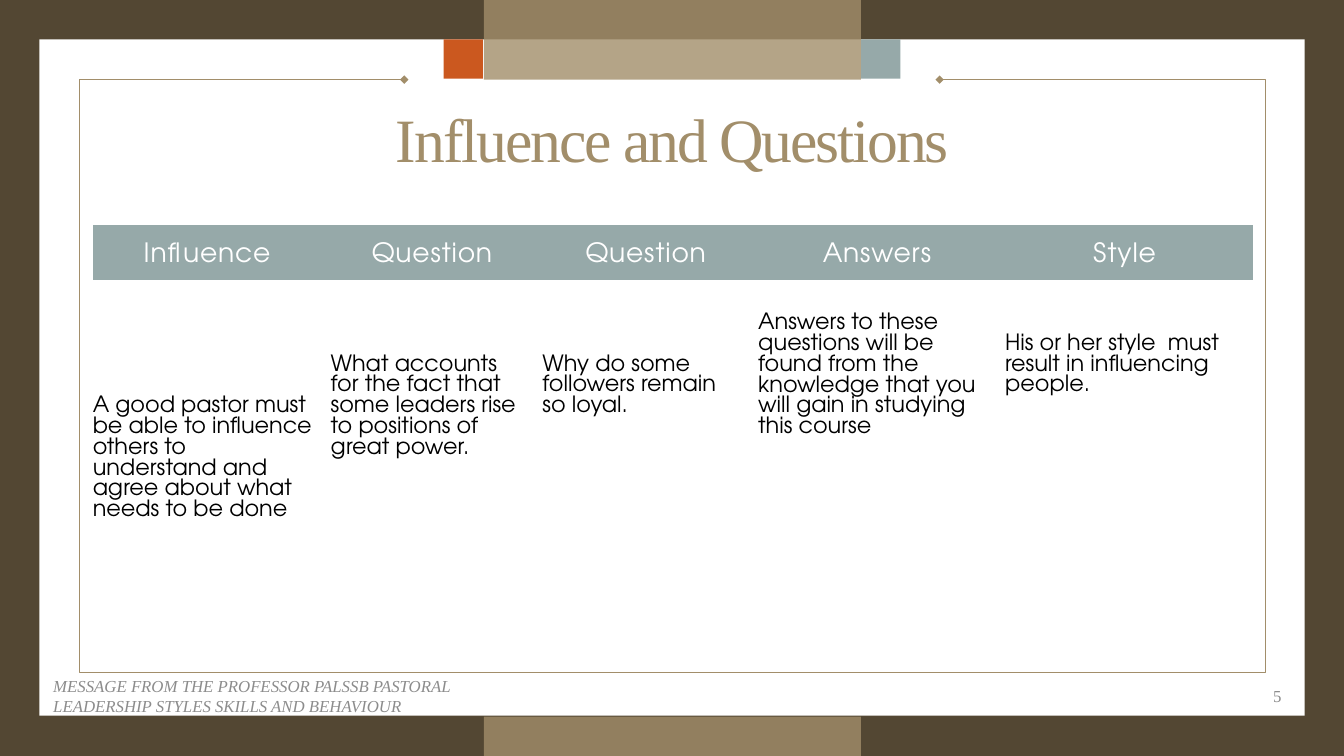
"""Build the Influence and Questions slide."""
from dataclasses import dataclass

from pptx import Presentation
from pptx.dml.color import RGBColor
from pptx.enum import shapes, text
from pptx.oxml import ns, xmlchemy
from pptx.util import Inches, Pt

TITLE = "Influence and Questions"
FOOTER = "MESSAGE FROM THE PROFESSOR PALSSB PASTORAL LEADERSHIP STYLES SKILLS AND BEHAVIOUR"
PAGE = "5"
COLUMNS = [
    ("Influence ", 2.36, 5, "A good pastor must be able to influence others to understand and "
                            "agree about what needs to be done"),
    ("Question ", 2.1, 3, "What accounts for the fact that some leaders rise to positions of "
                          "great power."),
    ("Question ", 2.14, 3, "Why do some followers remain so loyal."),
    ("Answers ", 2.45, 1, "Answers to these questions will be found from the knowledge that "
                          "you will gain in studying this course"),
    ("Style ", 2.46, 2, "His or her style  must result in influencing people."),
]
ROW_HEIGHTS = (0.55, 3.51)
LINE_STEP = 0.206
NO_STYLE = "{2D5ABB26-0587-4C30-8999-92F81FD0307C}"


@dataclass(frozen=True)
class Theme:
    """Colours, fonts and type sizes."""
    dark: str = "534733"
    white: str = "FFFFFF"
    black: str = "000000"
    tan: str = "A28E6A"
    orange: str = "CB581F"
    sage: str = "96A9A9"
    grey: str = "8C8C8C"
    serif: str = "Times New Roman"
    sans: str = "TeX Gyre Adventor"
    title: float = 44
    header: float = 19
    body: float = 16
    footer: float = 12


THEME = Theme()
BLOCKS = [
    (4.8, 0, 3.74, 0.79, THEME.tan, 80),
    (4.4, 0.39, 0.39, 0.39, THEME.orange, 100),
    (8.54, 0.39, 0.39, 0.39, THEME.sage, 100),
    (4.8, 7.11, 3.74, 0.39, THEME.tan, 80),
]
FRAME = [(9.32, 0.79), (12.55, 0.79), (12.55, 6.67), (0.79, 6.67), (0.79, 0.79), (4.01, 0.79)]


def write(frame, words, *, size, color, font=THEME.serif, align=text.PP_ALIGN.LEFT,
          anchor=text.MSO_ANCHOR.MIDDLE, spacing=0, italic=False, line_spacing=None):
    """Put one formatted paragraph into a text frame."""
    frame.word_wrap = True
    frame.vertical_anchor = anchor
    paragraph = frame.paragraphs[0]
    paragraph.alignment = align
    if line_spacing:
        paragraph.line_spacing = line_spacing
    run = paragraph.add_run()
    run.text = words
    run.font.name, run.font.size, run.font.italic = font, Pt(size), italic
    run.font.color.rgb = RGBColor.from_string(color)
    run._r.get_or_add_rPr().set("spc", str(round(spacing * 100)))


def add_block(slide, left, top, width, height, color, opacity=100):
    """Add a borderless rectangle."""
    block = slide.shapes.add_shape(shapes.MSO_SHAPE.RECTANGLE, *map(Inches, (left, top, width, height)))
    block.shadow.inherit = False
    block.line.fill.background()
    block.fill.solid()
    block.fill.fore_color.rgb = RGBColor.from_string(color)
    if opacity < 100:
        tint = block.element.spPr.find(".//" + ns.qn("a:srgbClr"))
        alpha = xmlchemy.OxmlElement("a:alpha")
        alpha.set("val", str(opacity * 1000))
        tint.append(alpha)


def add_frame(slide):
    """Draw the open border with diamond ends."""
    points = [(Inches(x), Inches(y)) for x, y in FRAME]
    builder = slide.shapes.build_freeform(*points[0])
    builder.add_line_segments(points[1:], close=False)
    border = builder.convert_to_shape()
    border.shadow.inherit = False
    border.fill.background()
    border.line.color.rgb = RGBColor.from_string(THEME.tan)
    border.line.width = Pt(1)
    for end in ("a:headEnd", "a:tailEnd"):
        diamond = xmlchemy.OxmlElement(end)
        diamond.set("type", "diamond")
        border.element.spPr.find(ns.qn("a:ln")).append(diamond)


def set_margins(cell, top, right):
    """Set the inner margins of a cell."""
    cell.margin_left, cell.margin_top = 0, Inches(top)
    cell.margin_right, cell.margin_bottom = Inches(right), Inches(0.07)


def add_questions(slide):
    """Add the table of influence, questions, answers and style."""
    holder = slide.shapes.add_table(2, len(COLUMNS), *map(Inches, (0.92, 2.23, 11.5, sum(ROW_HEIGHTS))))
    holder.element.find(".//" + ns.qn("a:tableStyleId")).text = NO_STYLE
    table = holder.table
    table.horz_banding = False
    for row, height in zip(table.rows, ROW_HEIGHTS):
        row.height = Inches(height)
    for index, (heading, width, lines_down, answer) in enumerate(COLUMNS):
        table.columns[index].width = Inches(width)
        head, body = table.cell(0, index), table.cell(1, index)
        head.fill.solid()
        head.fill.fore_color.rgb = RGBColor.from_string(THEME.sage)
        body.fill.background()
        set_margins(head, 0.12, 0.01)
        set_margins(body, 0.12 + lines_down * LINE_STEP, 0.15)
        head.vertical_anchor = text.MSO_ANCHOR.MIDDLE
        write(head.text_frame, heading, size=THEME.header, color=THEME.white, font=THEME.sans,
              align=text.PP_ALIGN.CENTER, anchor=None, spacing=0.6)
        write(body.text_frame, answer, size=THEME.body, color=THEME.black, font=THEME.sans,
              anchor=None)


def main():
    """Compose and save the slide."""
    deck = Presentation()
    deck.slide_width, deck.slide_height = Inches(13.33), Inches(7.5)
    slide = deck.slides.add_slide(deck.slide_layouts[5])
    slide.background.fill.solid()
    slide.background.fill.fore_color.rgb = RGBColor.from_string(THEME.dark)

    add_block(slide, 0.39, 0.39, 12.55, 6.71, THEME.white)
    add_frame(slide)
    for block in BLOCKS:
        add_block(slide, *block)

    title = slide.shapes.title
    title.left, title.top, title.width, title.height = map(Inches, (0.92, 0.98, 11.5, 0.87))
    write(title.text_frame, TITLE, size=THEME.title, color=THEME.tan,
          align=text.PP_ALIGN.CENTER, spacing=-1.5, line_spacing=0.9)
    title.element.getparent().append(title.element)

    add_questions(slide)
    for words, left, width, align, italic in (
        (FOOTER, 0.43, 4.5, text.PP_ALIGN.LEFT, True),
        (PAGE, 9.81, 3, text.PP_ALIGN.RIGHT, False),
    ):
        note = slide.shapes.add_textbox(*map(Inches, (left, 6.82, width, 0.16)))
        write(note.text_frame, words, size=THEME.footer, color=THEME.grey, align=align, italic=italic)
    deck.save("out.pptx")


if __name__ == "__main__":
    main()
